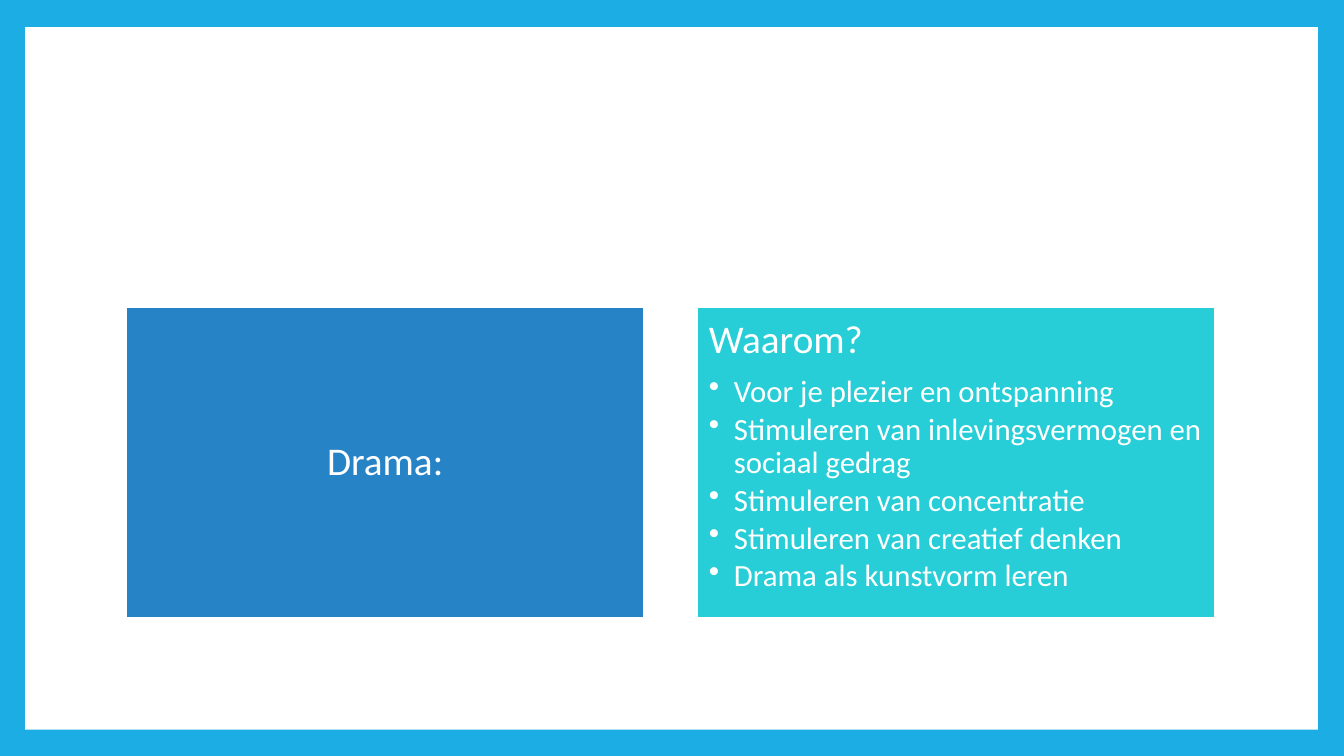
from dataclasses import dataclass

from lxml import etree
from pptx import Presentation
from pptx.dml.color import RGBColor
from pptx.enum.shapes import MSO_SHAPE
from pptx.enum.text import MSO_ANCHOR, PP_ALIGN
from pptx.oxml.ns import qn
from pptx.slide import Slide
from pptx.util import Inches, Pt

RECT = MSO_SHAPE.RECTANGLE
TOP, MIDDLE = MSO_ANCHOR.TOP, MSO_ANCHOR.MIDDLE
LEFT, CENTER = PP_ALIGN.LEFT, PP_ALIGN.CENTER

COLORS = {"frame": "1CADE4", "white": "FFFFFF", "blue": "2683C6", "teal": "27CED7"}
FONT = "Calibri"
HEAD, BODY = 28, 22
INDENT = Inches(0.25)


@dataclass
class Card:
    title: str
    fill: str
    anchor: MSO_ANCHOR
    align: PP_ALIGN
    points: tuple[str, ...] = ()


CARDS = [
    Card("Drama:", "blue", MIDDLE, CENTER),
    Card("Waarom?", "teal", TOP, LEFT, (
        "Voor je plezier en ontspanning",
        "Stimuleren van inlevingsvermogen en sociaal gedrag",
        "Stimuleren van concentratie",
        "Stimuleren van creatief denken",
        "Drama als kunstvorm leren",
    )),
]


def color(name: str) -> RGBColor:
    return RGBColor.from_string(COLORS[name])


def add_box(slide: Slide, left: float, top: float, width: float, height: float, fill: str):
    box = slide.shapes.add_shape(
        RECT, Inches(left), Inches(top), Inches(width), Inches(height))
    box.shadow.inherit = False
    box.fill.solid()
    box.fill.fore_color.rgb = color(fill)
    box.line.fill.background()
    return box


def add_text(para, text: str, size: int, align: PP_ALIGN, after: float) -> None:
    para.alignment = align
    para.line_spacing = 0.9
    para.space_after = Pt(after)
    run = para.add_run()
    run.text = text
    run.font.size = Pt(size)
    run.font.name = FONT
    run.font.color.rgb = color("white")


def add_bullet(para) -> None:
    para.level = 1
    props = para._p.get_or_add_pPr()
    props.set("marL", str(INDENT))
    props.set("indent", str(-INDENT))
    etree.SubElement(props, qn("a:buChar"), char="•")


def add_card(slide: Slide, card: Card, left: float) -> None:
    box = add_box(slide, left, 3.05, 5.14, 3.08, card.fill)
    box.line.color.rgb = color("white")
    box.line.width = Pt(1.5)
    frame = box.text_frame
    frame.word_wrap = True
    frame.vertical_anchor = card.anchor
    frame.margin_left = frame.margin_right = Inches(0.12)
    frame.margin_top = frame.margin_bottom = Inches(0.12)
    add_text(frame.paragraphs[0], card.title, HEAD, card.align, 9.8)
    for point in card.points:
        para = frame.add_paragraph()
        add_text(para, point, BODY, card.align, 3.3)
        add_bullet(para)


def main() -> None:
    deck = Presentation()
    deck.slide_width, deck.slide_height = Inches(13.33), Inches(7.5)
    slide = deck.slides.add_slide(deck.slide_layouts[6])

    # Blue frame around a white page
    slide.background.fill.solid()
    slide.background.fill.fore_color.rgb = color("frame")
    add_box(slide, 0.25, 0.27, 12.82, 6.97, "white")

    # Two cards side by side
    for i, card in enumerate(CARDS):
        add_card(slide, card, 1.25 + i * 5.66)

    deck.save("out.pptx")


if __name__ == "__main__":
    main()
